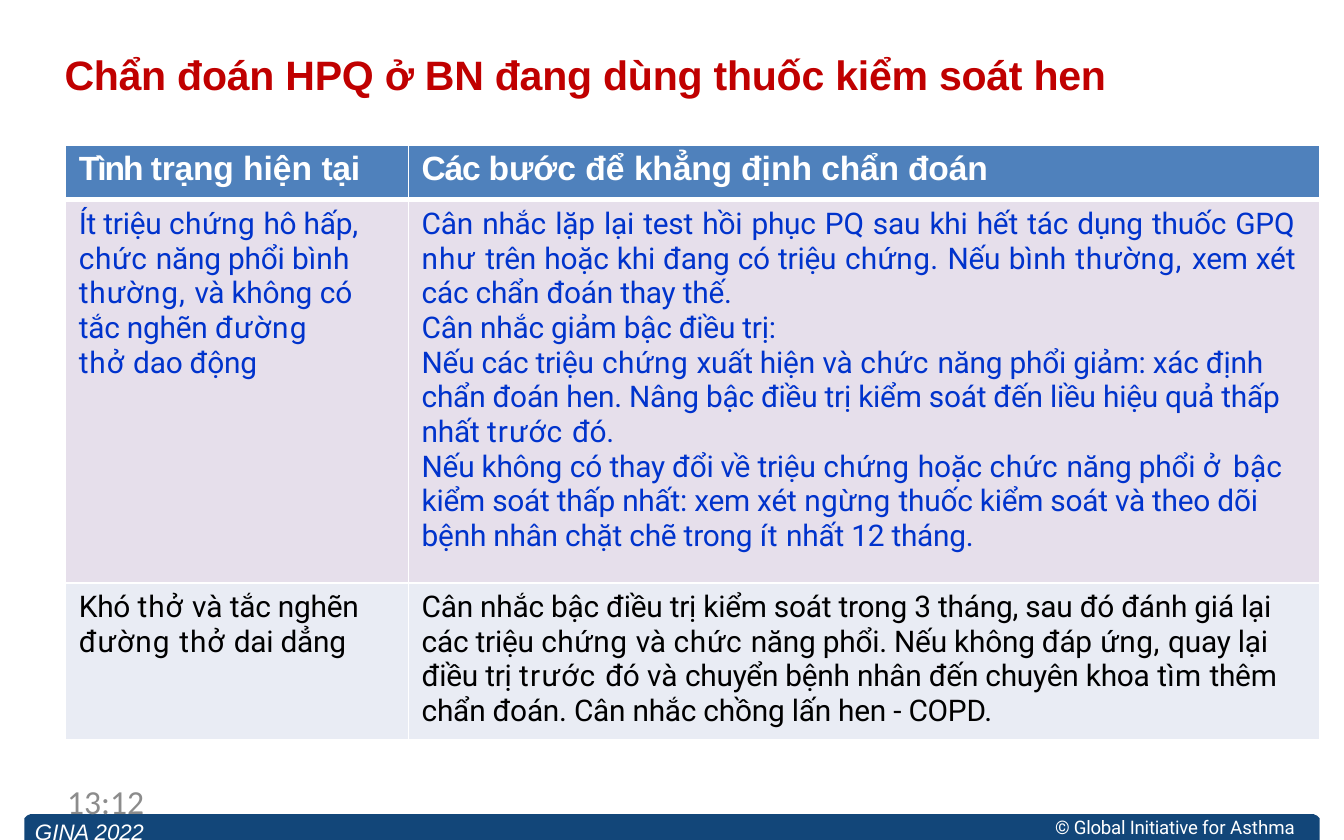
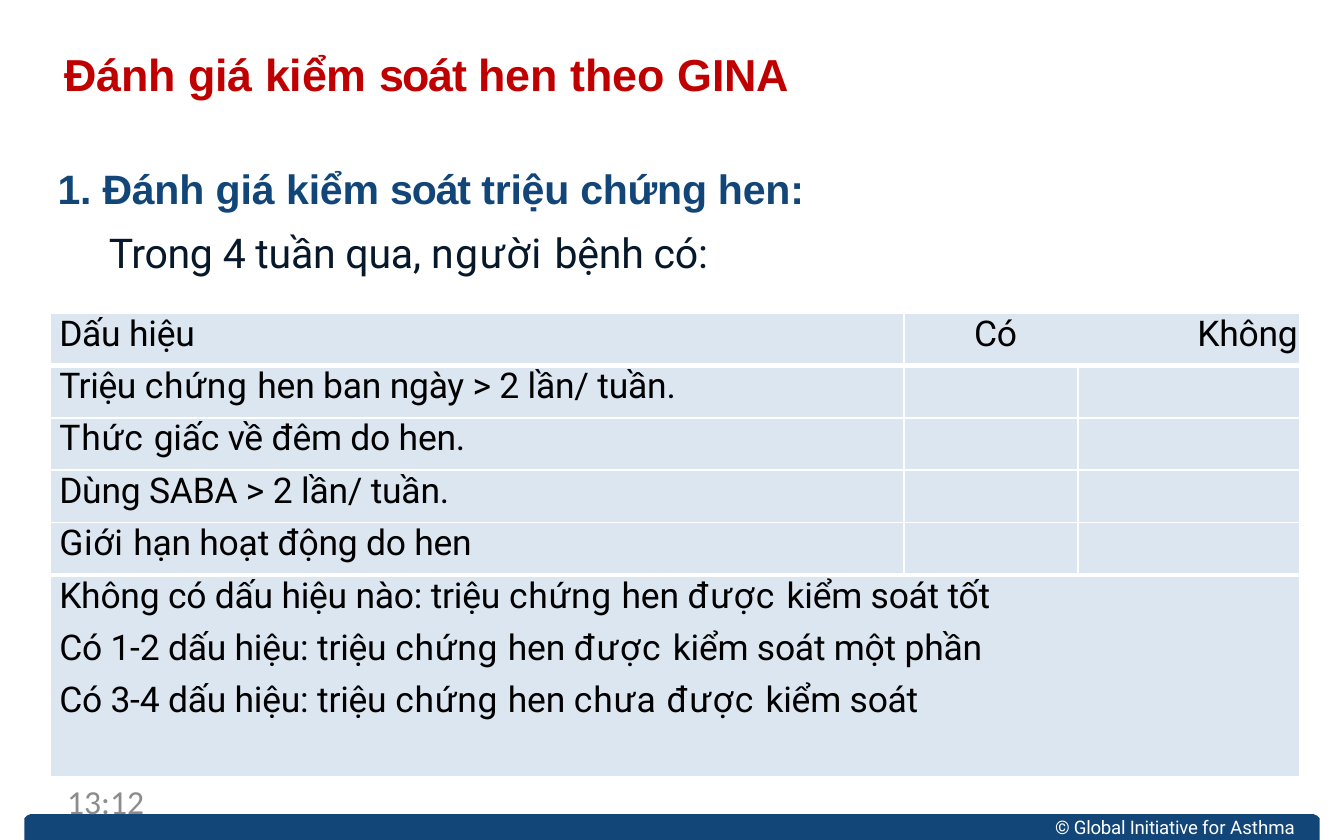
from dataclasses import dataclass
from typing import NamedTuple, Optional

from lxml.etree import SubElement
from pptx import Presentation
from pptx.dml.color import RGBColor
from pptx.enum.text import PP_ALIGN as Align
from pptx.oxml.ns import qn
from pptx.util import Cm, Pt

WIDE, HIGH = 25.4, 15.88
WHITE, BLACK, RED, NAVY = "FFFFFF", "000000", "C00000", "124679"
HEAD, MAUVE, PALE, ICE = "4F81BC", "E6DFEB", "E9ECF4", "DCE6F1"


class Look(NamedTuple):
    size: float
    font: str
    hue: str
    bold: bool = False
    slant: bool = False


class Run(NamedTuple):
    text: str
    gap: float = -0.1  # letter spacing in points


class Box(NamedTuple):
    left: float
    top: float
    width: float
    height: float
    inset: float = 0


@dataclass
class Para:
    look: Look
    runs: list[Run]
    pitch: Optional[float] = None
    before: float = 0
    indent: float = 0
    tab: float = 0
    align: Align = Align.LEFT


@dataclass
class Cell:
    paras: list[Para]
    fill: str
    left: float = 0.25
    top: float = 0
    right: float = 0
    span: int = 1


@dataclass
class Grid:
    left: float
    top: float
    cols: list[float]
    rows: list[float]
    heavy: set[int]  # row boundaries with a thick rule


BREAK = Run("\n")
CLOCK = Look(18, "Calibri", "8C8C8C")
RIGHTS = Look(10, "Roboto", WHITE)
SOURCE = Look(12, "Arial", WHITE, slant=True)
TOPIC = Look(22, "Arial", NAVY, bold=True)
LEAD = Look(22, "Roboto", "07182B")
LABEL = Look(18, "Arial", WHITE, bold=True)
BLUE = Look(16, "Roboto", "0033CC")
DARK = Look(16, "Roboto", BLACK)
SIGN = Look(19, "Roboto", BLACK)


def paint(fill, hue: str) -> None:
    fill.solid()
    fill.fore_color.rgb = RGBColor.from_string(hue)


def write(frame, paras: list[Para]) -> None:
    frame.word_wrap = True
    for i, item in enumerate(paras):
        para = frame.paragraphs[0] if i == 0 else frame.add_paragraph()
        para.alignment = item.align
        if item.pitch:
            para.line_spacing = Pt(item.pitch) if item.pitch > 5 else item.pitch
        if i and item.before:
            para.space_before = Pt(item.before)
        props = para._p.get_or_add_pPr()
        if item.indent:
            props.set("marL", str(Cm(item.indent)))
        if item.tab:
            tabs = SubElement(props, qn("a:tabLst"))
            SubElement(tabs, qn("a:tab"), pos=str(Cm(item.tab)), algn="l")
        for part in item.runs:
            if part == BREAK:
                para.add_line_break()
                continue
            run = para.add_run()
            run.text = part.text
            look, font = item.look, run.font
            font.size, font.name = Pt(look.size), look.font
            font.bold, font.italic = look.bold, look.slant
            paint(font.fill, look.hue)
            run._r.get_or_add_rPr().set("spc", str(round(part.gap * 100)))


def add_text(slide, box: Box, *paras: Para) -> None:
    shape = slide.shapes.add_textbox(*map(Cm, box[:4]))
    frame = shape.text_frame
    frame.margin_left = frame.margin_right = frame.margin_bottom = 0
    frame.margin_top = Cm(box.inset)
    write(frame, list(paras))


def rule(cell, sides: dict[str, int]) -> None:
    """Draw white borders; sides maps a side letter to points."""
    props = cell._tc.get_or_add_tcPr()
    for i, (side, width) in enumerate(sides.items()):
        line = SubElement(props, qn(f"a:ln{side}"), w=str(Pt(width)))
        solid = SubElement(line, qn("a:solidFill"))
        SubElement(solid, qn("a:srgbClr"), val=WHITE)
        props.insert(i, line)


def add_grid(slide, grid: Grid, cells: list[list[Cell]]) -> None:
    size = sum(grid.cols), sum(grid.rows)
    frame = slide.shapes.add_table(len(grid.rows), len(grid.cols),
                                   *map(Cm, (grid.left, grid.top, *size)))
    table = frame.table
    table.first_row = table.horz_banding = False
    for col, width in zip(table.columns, grid.cols):
        col.width = Cm(width)
    for r, (row, height) in enumerate(zip(table.rows, grid.rows)):
        row.height = Cm(height)
        c = 0
        for item in cells[r]:
            for k in range(c, c + item.span):
                cell = table.cell(r, k)
                paint(cell.fill, item.fill)
                rule(cell, {"L": 1, "R": 1,
                            "T": 3 if r in grid.heavy else 1,
                            "B": 3 if r + 1 in grid.heavy else 1})
                cell.margin_top = cell.margin_bottom = 0
            first = table.cell(r, c)
            first.margin_left, first.margin_right = Cm(item.left), Cm(item.right)
            first.margin_top = Cm(item.top)
            if item.span > 1:
                first.merge(table.cell(r, c + item.span - 1))
            write(first.text_frame, item.paras)
            c += item.span


def add_band(slide) -> None:
    half = [(0.46, HIGH), (0.46, 15.47), (0.51, 15.42), (0.58, 15.39)]
    whole = half + [(WIDE - x, y) for x, y in reversed(half)]
    spots = [(Cm(x), Cm(y)) for x, y in whole]
    form = slide.shapes.build_freeform(*spots[0])
    form.add_line_segments(spots[1:])
    band = form.convert_to_shape()
    band.shadow.inherit = False
    paint(band.fill, NAVY)
    band.line.fill.background()


def start(deck, box: Box, size: float, title: list[Run]):
    """Add a slide with its band, title, rights line and clock."""
    slide = deck.slides.add_slide(deck.slide_layouts[6])
    add_band(slide)
    add_text(slide, box, Para(Look(size, "Arial", RED, bold=True), title))
    add_text(slide, Box(19.94, 15.42, 4.62, 0.46),
             Para(RIGHTS, [Run("© Global Initiative "), Run("for Asthma", 0)]))
    add_text(slide, Box(1.27, 14.76, 5.84, 0.79), Para(CLOCK, [Run("13:12", 0)]))
    return slide


def add_steps(deck) -> None:
    slide = start(deck, Box(1.22, 0.91, 20.02, 0.99, 0.03), 22,
                  [Run("Chẩn đoán HPQ ở BN đang dùng thuốc kiểm soát hen")])
    add_text(slide, Box(0.66, 15.47, 2.16, 0.53),
             Para(SOURCE, [Run("GI", 0), Run("NA "), Run("2", 0), Run("022")], pitch=14.2))

    def cell(fill: str, *paras: Para) -> Cell:
        return Cell(list(paras), fill, top=0.1 if fill == HEAD else 0.13, right=0.46)

    state = Para(LABEL, [Run("Tình ", -1.1), Run("trạng "), Run("hiện ", 0), Run("tại")])
    steps = Para(LABEL, [Run("Các ", -0.7), Run("bước để ", 0), Run("khẳng "),
                         Run("định ", 0), Run("chẩn đoán")])
    mild = Para(BLUE, [
        Run("Ít triệu "), Run("chứng ", 0.3), Run("hô hấp, "), Run("chức ", 0.4),
        Run("năng phổi "), Run("bình ", 0.1), Run("thường, ", 0.5), Run("và không"),
        Run(" có ", 0), Run("tắc nghẽn "), Run("đường ", 0.7), BREAK,
        Run("thở ", 0.5), Run("dao động")])
    test = Para(BLUE, [
        Run("Cân nhắc lặp lại test hồi phục PQ sau khi hết tác dụng thuốc GPQ "),
        Run("như ", 0.5), Run("trên hoặc khi đang có triệu "), Run("chứng. ", 0.2),
        Run("Nếu "), Run("bình ", 0.1), Run("thường, ", 0.5),
        Run("xem xét các chẩn đoán thay thế.")], align=Align.JUSTIFY)
    lower = Para(BLUE, [Run("Cân nhắc giảm bậc điều trị:")], align=Align.JUSTIFY)
    worse = Para(BLUE, [
        Run("Nếu các triệu"), Run(" chứng ", 0.3), Run("xuất hiện "), Run("và ", 0),
        Run("chức ", 0.4),
        Run("năng phổi giảm: xác định chẩn đoán hen. Nâng bậc điều trị "
            "kiểm soát đến liều hiệu quả thấp nhất "),
        Run("trước ", 0.6), Run("đó.")])
    same = Para(BLUE, [
        Run("Nếu không "), Run("có ", 0), Run("thay đổi về triệu "), Run("chứng ", 0.3),
        Run("hoặc "), Run("chức ", 0.4), Run("năng phổi "), Run("ở ", 1.6),
        Run("bậc ", 0.1), Run("kiểm soát thấp nhất: xem xét "), Run("ngừng ", 0.2),
        Run("thuốc kiểm soát và theo dõi bệnh nhân chặt chẽ trong "),
        Run("ít ", 0.3), Run("nhất 12 tháng.")])
    short = Para(DARK, [
        Run("Khó "), Run("thở ", 0.5), Run("và ", 0), Run("tắc nghẽn "),
        Run("đường ", 0.6), Run("thở ", 0.5), Run("dai dẳng")])
    review = Para(DARK, [
        Run("Cân nhắc bậc điều trị kiểm soát trong 3 tháng, sau đó đánh giá lại các triệu "),
        Run("chứng ", 0.3), Run("và ", 0), Run("chức ", 0.4),
        Run("năng phổi. Nếu không đáp"), Run(" ứng, ", 0.3), Run("quay lại điều trị "),
        Run("trước ", 0.7), Run("đó "), Run("và ", 0),
        Run("chuyển bệnh nhân đến chuyên khoa "), Run("tìm ", 0.2),
        Run("thêm chẩn đoán. Cân nhắc chồng lấn hen - COPD.")])
    add_grid(slide, Grid(1.24, 2.74, [6.48, 17.22], [1.04, 7.24, 2.97], {1}), [
        [cell(HEAD, state), cell(HEAD, steps)],
        [cell(MAUVE, mild), cell(MAUVE, test, lower, worse, same)],
        [cell(PALE, short), cell(PALE, review)]])


def add_signs(deck) -> None:
    slide = start(deck, Box(1.22, 0.86, 13.89, 1.09, 0.03), 24, [
        Run("Đánh "), Run("giá ", 0), Run("kiểm "), Run("soát ", -0.7),
        Run("hen theo GINA", 0)])
    add_text(slide, Box(1.09, 2.79, 14.43, 2.49, 0.3),
             Para(TOPIC, [Run("1. Đánh "), Run("giá ", 0), Run("kiểm "),
                          Run("soát ", -0.6), Run("triệu chứng hen:")]),
             Para(LEAD, [Run("Trong ", -0.2), Run("4 tuần qua, "),
                         Run("người ", 0.8), Run("bệnh có:")], before=7.8, indent=0.97))

    def line(*runs: Run, pitch: float = 22.4, tab: float = 0) -> Para:
        return Para(SIGN, list(runs), pitch=pitch, tab=tab)

    def cell(*paras: Para, left: float = 0.18, span: int = 1) -> Cell:
        return Cell(list(paras), ICE, left=left, span=span)

    signs = [
        line(Run("Triệu ", -0.2), Run("chứng ", 0.4), Run("hen ban ngày > 2 lần/ tuần.")),
        line(Run("Thức ", 0.5), Run("giấc về đêm do hen.")),
        line(Run("Dùng SABA > 2 lần/ tuần.")),
        line(Run("Giới ", 0.4), Run("hạn hoạt động do hen"))]
    tail = [Run("chứng ", 0.4), Run("hen ")]
    good = line(Run("Không có dấu hiệu nào: triệu "), *tail,
                Run("được ", 0.9), Run("kiểm soát tốt"))
    poor = line(Run("Có 1-2 dấu hiệu: triệu "), *tail, Run("được ", 0.9),
                Run("kiểm soát một phần "), BREAK,
                Run("Có 3-4 dấu hiệu: triệu "), *tail, Run("chưa ", 0.5),
                Run("được ", 0.9), Run("kiểm soát"), pitch=1.26)
    head = [cell(line(Run("Dấu hiệu"))),
            cell(line(Run("Có\tKhông"), tab=4.22), left=1.32, span=2)]
    add_grid(slide, Grid(0.94, 5.92, [16.15, 3.28, 4.19], [0.99] * 5 + [3.81], {1, 5}),
             [head, *([cell(sign), cell(), cell()] for sign in signs),
              [cell(good, poor, span=3)]])


def main() -> None:
    deck = Presentation()
    deck.slide_width, deck.slide_height = Cm(WIDE), Cm(HIGH)
    add_steps(deck)
    add_signs(deck)
    deck.save("out.pptx")


if __name__ == "__main__":
    main()
